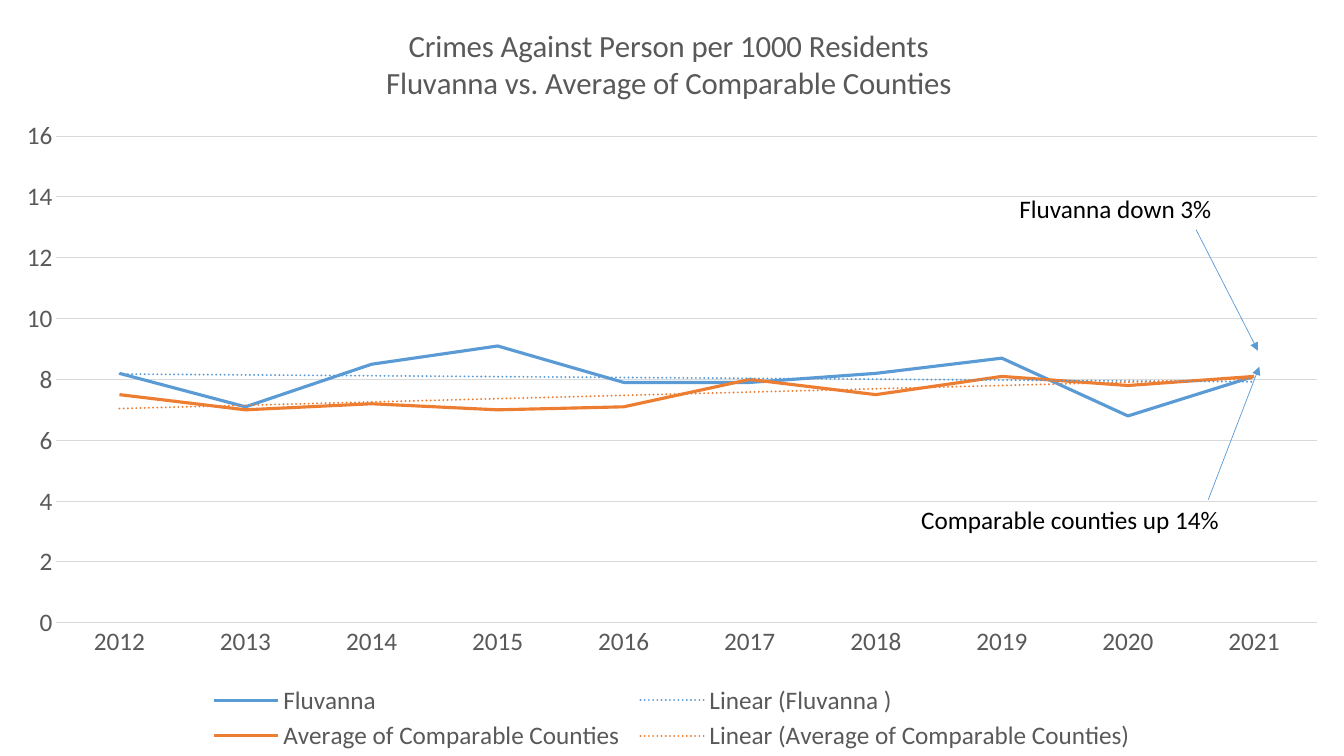
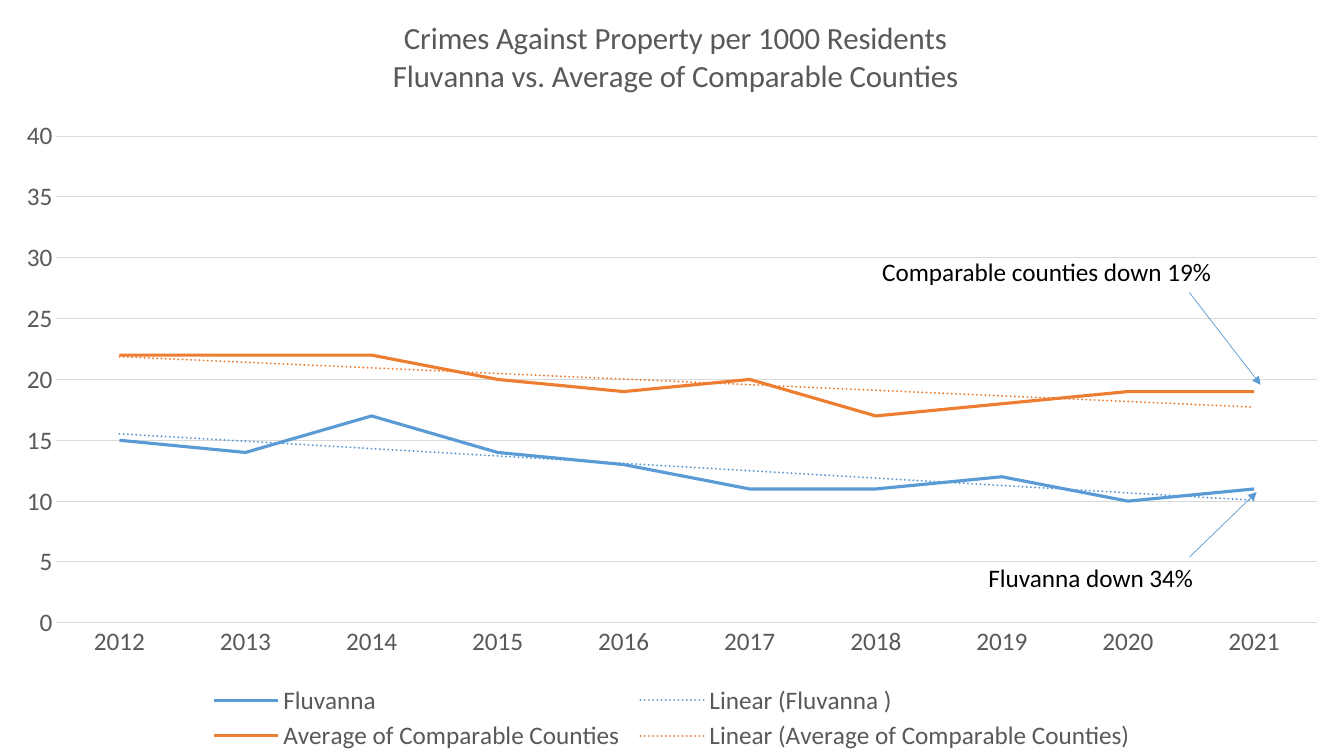
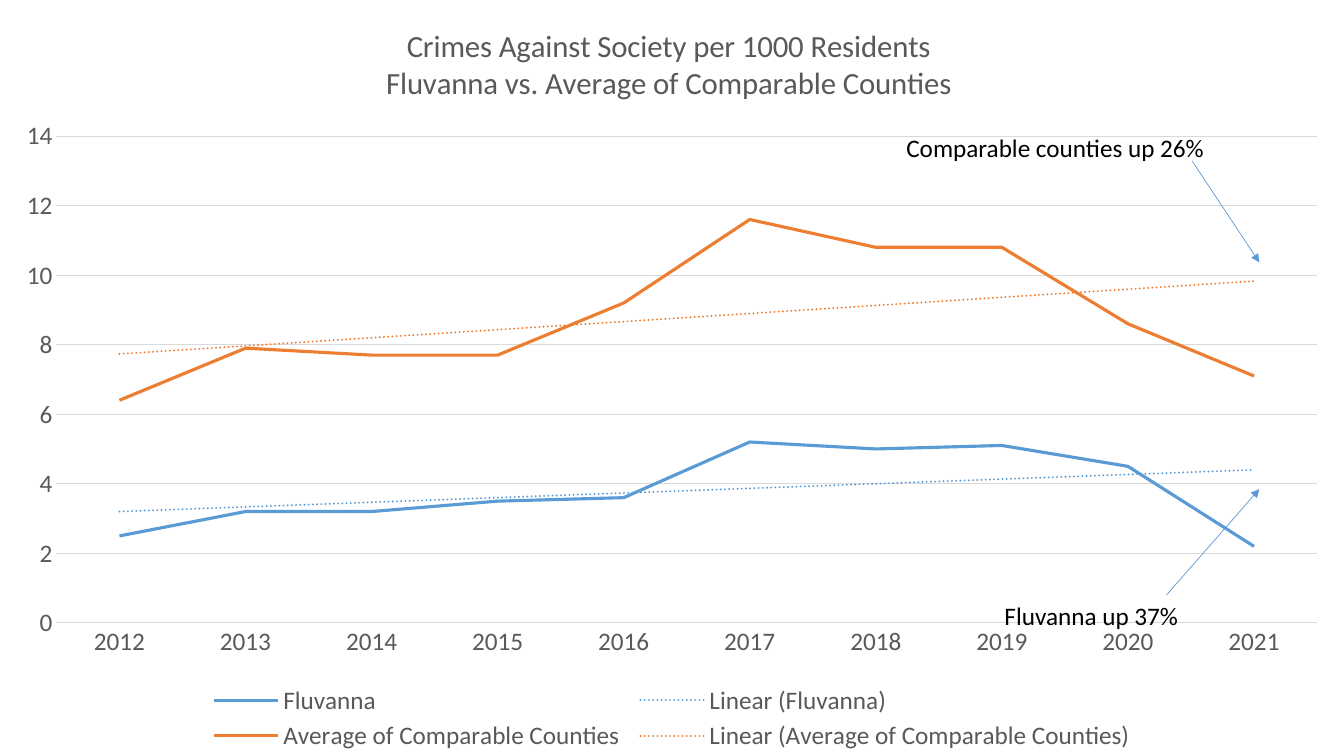
from pptx import Presentation
from pptx.chart.data import CategoryChartData
from pptx.dml.color import RGBColor
from pptx.enum.chart import XL_CHART_TYPE, XL_LEGEND_POSITION, XL_TICK_MARK
from pptx.enum.shapes import MSO_CONNECTOR
from pptx.enum.text import MSO_AUTO_SIZE
from pptx.oxml import parse_xml
from pptx.oxml.ns import nsdecls, qn
from pptx.util import Inches, Pt

W, H = Inches(13.33), Inches(7.5)
FONT = "Calibri"
BLUE, ORANGE, GREY, GRID, BLACK = "5B9BD5", "ED7D31", "595959", "D9D9D9", "000000"
YEARS = [str(year) for year in range(2012, 2022)]
COMPARABLE = "Average of Comparable Counties"
SUBTITLE = "Fluvanna vs. Average of Comparable Counties"

SLIDES = [
    dict(
        title="Crimes Against Person per 1000 Residents", title_at=(0.285, 0.03),
        top=16, step=2, county="Fluvanna ",
        fluvanna=[8.2, 7.1, 8.5, 9.1, 7.9, 7.9, 8.2, 8.7, 6.8, 8.1],
        average=[7.5, 7, 7.2, 7, 7.1, 8, 7.5, 8.1, 7.8, 8.1],
        callouts=[
            ("Fluvanna down 3%", (75.1, 24.9, 17.4), (89, 30.4), (93.6, 46.4)),
            ("Comparable counties up 14%", (67.8, 66.1, 23.9), (89.9, 66.1), (93.7, 48.5)),
        ],
    ),
    dict(
        title="Crimes Against Property per 1000 Residents", title_at=(0.29, 0.02),
        top=40, step=5, county="Fluvanna ",
        fluvanna=[15, 14, 17, 14, 13, 11, 11, 12, 10, 11],
        average=[22, 22, 22, 20, 19, 20, 17, 18, 19, 19],
        callouts=[
            ("Fluvanna down 34%", (72.8, 73.7, 17), (88.5, 73.7), (93.5, 65.1)),
            ("Comparable counties down 19%", (64.9, 33.3, 26.3), (88.5, 38.7), (93.8, 50.9)),
        ],
    ),
    dict(
        title="Crimes Against Society per 1000 Residents", title_at=(0.285, 0.03),
        top=14, step=2, county="Fluvanna",
        fluvanna=[2.5, 3.2, 3.2, 3.5, 3.6, 5.2, 5, 5.1, 4.5, 2.2],
        average=[6.4, 7.9, 7.7, 7.7, 9.2, 11.6, 10.8, 10.8, 8.6, 7.1],
        callouts=[
            ("Comparable counties up 26%", (66.7, 16.9, 23.9), (88.7, 21.3), (93.7, 34.7)),
            ("Fluvanna up 37%", (74, 78.7, 14.7), (86.8, 78.7), (93.7, 64.7)),
        ],
    ),
]


def across(percent):
    """Return a percentage of the slide width."""
    return int(W * percent / 100)


def down(percent):
    """Return a percentage of the slide height."""
    return int(H * percent / 100)


def rgb(color):
    """Turn a hex string into a colour."""
    return RGBColor.from_string(color)


def set_font(font, color, size=18):
    """Apply the shared typeface with a colour and size."""
    font.name, font.size, font.bold = FONT, Pt(size), False
    font.color.rgb = rgb(color)


def set_line(line, color, width):
    """Give a line a solid colour and a width in points."""
    line.color.rgb = rgb(color)
    line.width = Pt(width)


def set_layout(element, index, inner=False, **shares):
    """Place a chart part by shares of the chart's size."""
    for old in element.findall(qn("c:layout")):
        element.remove(old)
    target = '<c:layoutTarget val="inner"/>' if inner else ""
    modes = "".join(f'<c:{key}Mode val="edge"/>' for key in "xy")
    values = "".join(f'<c:{key} val="{value}"/>' for key, value in shares.items())
    element.insert(index, parse_xml(
        f'<c:layout {nsdecls("c")}><c:manualLayout>{target}{modes}{values}'
        "</c:manualLayout></c:layout>"))


def add_trend(series, color):
    """Add a dotted linear trend line to a series."""
    trend = parse_xml(
        f'<c:trendline {nsdecls("c", "a")}><c:spPr><a:ln w="{Pt(1.5)}" cap="rnd">'
        f'<a:solidFill><a:srgbClr val="{color}"/></a:solidFill><a:prstDash val="sysDot"/>'
        '</a:ln></c:spPr><c:trendlineType val="linear"/><c:dispRSqr val="0"/>'
        '<c:dispEq val="0"/></c:trendline>')
    series._element.find(qn("c:cat")).addprevious(trend)


def style_axes(chart, top, step):
    """Format both axes and the gridlines."""
    cat, val = chart.category_axis, chart.value_axis
    for axis in (cat, val):
        axis.major_tick_mark = axis.minor_tick_mark = XL_TICK_MARK.NONE
        set_font(axis.tick_labels.font, GREY)
    set_line(cat.format.line, GRID, 0.75)
    val.format.line.fill.background()
    val.minimum_scale, val.maximum_scale, val.major_unit = 0, top, step
    val.tick_labels.number_format = "#,##0"
    val.tick_labels.number_format_is_linked = False
    set_line(val.major_gridlines.format.line, GRID, 0.75)


def style_title(chart, title, at):
    """Write the two-line chart title."""
    chart.has_title = True
    tf = chart.chart_title.text_frame
    tf.text = f"{title}\n{SUBTITLE}"
    for p in tf.paragraphs:
        for r in p.runs:
            set_font(r.font, GREY, 22)
    set_layout(chart.chart_title._element, 1, x=at[0], y=at[1])


def style_legend(chart):
    """Put the legend in two columns along the bottom."""
    chart.has_legend = True
    legend = chart.legend
    legend.position = XL_LEGEND_POSITION.BOTTOM
    legend.include_in_layout = False
    set_font(legend.font, GREY)
    set_layout(legend._element, 1, x=0.15, y=0.9, w=0.7, h=0.1)


def add_crime_chart(s, data):
    """Fill the slide with a line chart and its trend lines."""
    chart_data = CategoryChartData()
    chart_data.categories = YEARS
    chart_data.add_series(data["county"], data["fluvanna"])
    chart_data.add_series(COMPARABLE, data["average"])
    chart = s.shapes.add_chart(XL_CHART_TYPE.LINE, 0, 0, W, H, chart_data).chart
    set_font(chart.font, BLACK)
    style_title(chart, data["title"], data["title_at"])
    style_axes(chart, data["top"], data["step"])
    style_legend(chart)
    chart.plots[0].vary_by_categories = False
    for series, color in zip(chart.plots[0].series, (BLUE, ORANGE)):
        series.smooth = False
        set_line(series.format.line, color, 2.25)
        add_trend(series, color)
    plot_area = chart._chartSpace.find(".//" + qn("c:plotArea"))
    set_layout(plot_area, 0, inner=True, x=0.042, y=0.18, w=0.938, h=0.644)


def add_callout(s, text, box, start, end):
    """Add a remark and an arrow from it to the end of a line."""
    left, top, width = box
    tf = s.shapes.add_textbox(across(left), down(top), across(width), Inches(0.4)).text_frame
    tf.word_wrap = True
    tf.auto_size = MSO_AUTO_SIZE.SHAPE_TO_FIT_TEXT
    tf.text = text
    set_font(tf.paragraphs[0].runs[0].font, BLACK)
    arrow = s.shapes.add_connector(
        MSO_CONNECTOR.STRAIGHT, across(start[0]), down(start[1]), across(end[0]), down(end[1]))
    set_line(arrow.line, BLUE, 0.5)
    sp_pr = arrow._element.spPr
    sp_pr.find(qn("a:ln")).append(parse_xml(f'<a:tailEnd {nsdecls("a")} type="triangle"/>'))
    sp_pr.append(parse_xml(f'<a:effectLst {nsdecls("a")}/>'))


def main():
    """Build and save the presentation."""
    prs = Presentation()
    prs.slide_width, prs.slide_height = W, H
    for data in SLIDES:
        s = prs.slides.add_slide(prs.slide_layouts[6])
        add_crime_chart(s, data)
        for callout in data["callouts"]:
            add_callout(s, *callout)
    prs.save("out.pptx")


if __name__ == "__main__":
    main()
